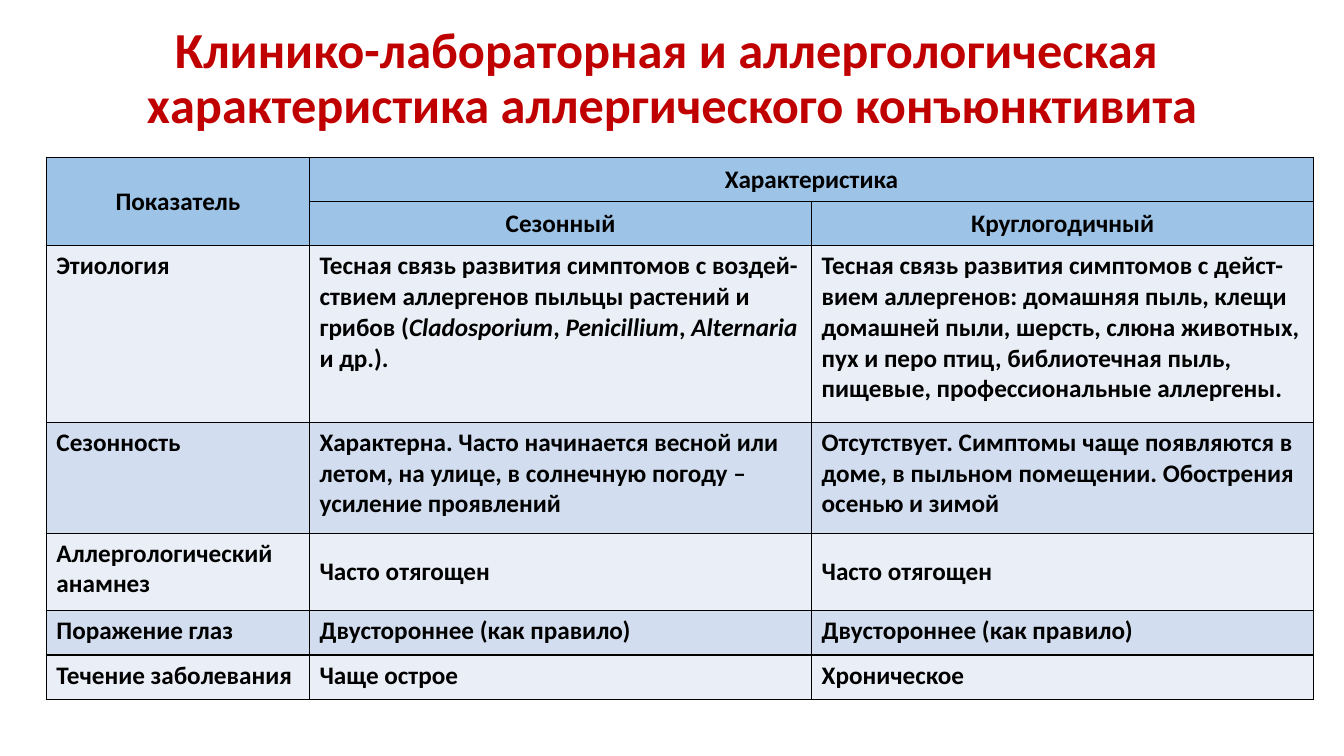
from dataclasses import dataclass

from lxml import etree
from pptx import Presentation, util as u
from pptx.dml.color import RGBColor
from pptx.enum import text
from pptx.oxml import ns

Inches = u.Inches


@dataclass(frozen=True)
class Theme:
    font: str = "Calibri"
    title_size: int = 36
    body_size: int = 18
    border_width: int = 1
    title: str = "C00000"
    ink: str = "000000"
    header: str = "9DC3E6"
    bands: tuple = ("EAEFF7", "D2DEEF")


THEME = Theme()
TITLE = [
    "Клинико-лабораторная и аллергологическая ",
    "характеристика аллергического конъюнктивита",
]
COLUMN_WIDTHS = [2.61, 4.98, 4.98]
ROW_HEIGHTS = [0.44, 0.44, 1.75, 1.1, 0.77, 0.44, 0.44]
HEADERS = [
    (0, 0, 1, 0, "Показатель"),
    (0, 1, 0, 2, "Характеристика"),
    (1, 1, 1, 1, "Сезонный"),
    (1, 2, 1, 2, "Круглогодичный"),
]
HISTORY = "Аллергологический анамнез"
ROWS = [
    (
        "Этиология",
        "Тесная связь развития симптомов с воздей-ствием аллергенов пыльцы "
        "растений и грибов (*Cladosporium*, *Penicillium*, *Alternaria *и др.).",
        "Тесная связь развития симптомов с дейст-вием аллергенов: домашняя пыль, "
        "клещи домашней пыли, шерсть, слюна животных, пух и перо птиц, "
        "библиотечная пыль, пищевые, профессиональные аллергены.",
    ),
    (
        "Сезонность",
        "Характерна. Часто начинается весной или летом, на улице, "
        "в солнечную погоду – усиление проявлений",
        "Отсутствует. Симптомы чаще появляются в|"
        "доме, в пыльном помещении. Обострения осенью и зимой",
    ),
    (HISTORY, "Часто отягощен", "Часто отягощен"),
    ("Поражение глаз", "Двустороннее (как правило)", "Двустороннее (как правило)"),
    ("Течение заболевания", "Чаще острое", "Хроническое"),
]


def set_attrs(obj, values):
    for name, value in values.items():
        setattr(obj, name, value)


def add_run(p, content, size, color, italic=False):
    r = p.add_run()
    r.text = content
    set_attrs(r.font, {"name": THEME.font, "size": u.Pt(size), "bold": True, "italic": italic})
    r.font.color.rgb = RGBColor.from_string(color)


def add_title(s):
    sp = s.shapes.title
    set_attrs(sp, {"left": Inches(0.92), "top": Inches(0.3),
                   "width": Inches(11.5), "height": Inches(0.98)})
    tf = sp.text_frame
    set_attrs(tf, {"word_wrap": True, "auto_size": text.MSO_AUTO_SIZE.NONE,
                   "vertical_anchor": text.MSO_ANCHOR.MIDDLE})
    p = tf.paragraphs[0]
    set_attrs(p, {"alignment": text.PP_ALIGN.CENTER, "line_spacing": 0.9})
    for i, line in enumerate(TITLE):
        if i:
            p.add_line_break()
        add_run(p, line, THEME.title_size, THEME.title)


def style_cell(cell, fill):
    tc_pr = cell._tc.get_or_add_tcPr()
    for side in ("a:lnL", "a:lnR", "a:lnT", "a:lnB"):
        ln = etree.SubElement(tc_pr, ns.qn(side), w=str(u.Pt(THEME.border_width)))
        solid = etree.SubElement(ln, ns.qn("a:solidFill"))
        etree.SubElement(solid, ns.qn("a:srgbClr"), val=THEME.ink)
    cell.fill.solid()
    cell.fill.fore_color.rgb = RGBColor.from_string(fill)


def write_cell(cell, content, align, anchor):
    cell.vertical_anchor = anchor
    tf = cell.text_frame
    for i, line in enumerate(content.split("|")):
        p = tf.add_paragraph() if i else tf.paragraphs[0]
        p.alignment = align
        for j, part in enumerate(line.split("*")):
            add_run(p, part, THEME.body_size, THEME.ink, italic=j % 2 == 1)


def add_comparison_table(s):
    table = s.shapes.add_table(
        len(ROW_HEIGHTS), len(COLUMN_WIDTHS), Inches(0.46), Inches(1.56),
        Inches(sum(COLUMN_WIDTHS)), Inches(sum(ROW_HEIGHTS))).table
    set_attrs(table, {"first_row": False, "horz_banding": False})
    for column, width in zip(table.columns, COLUMN_WIDTHS):
        column.width = Inches(width)
    for i, (row, height) in enumerate(zip(table.rows, ROW_HEIGHTS)):
        row.height = Inches(height)
        for cell in row.cells:
            style_cell(cell, THEME.header if i < 2 else THEME.bands[i % 2])
    for top, left, bottom, right, content in HEADERS:
        cell = table.cell(top, left)
        if (top, left) != (bottom, right):
            cell.merge(table.cell(bottom, right))
        write_cell(cell, content, text.PP_ALIGN.CENTER, text.MSO_ANCHOR.MIDDLE)
    for i, row in enumerate(ROWS, start=2):
        for j, content in enumerate(row):
            middle = row[0] == HISTORY and j > 0
            anchor = text.MSO_ANCHOR.MIDDLE if middle else text.MSO_ANCHOR.TOP
            write_cell(table.cell(i, j), content, text.PP_ALIGN.LEFT, anchor)


def main():
    prs = Presentation()
    set_attrs(prs, {"slide_width": Inches(13.33), "slide_height": Inches(7.5)})
    s = prs.slides.add_slide(prs.slide_layouts[5])
    add_title(s)
    add_comparison_table(s)
    prs.save("out.pptx")


if __name__ == "__main__":
    main()
